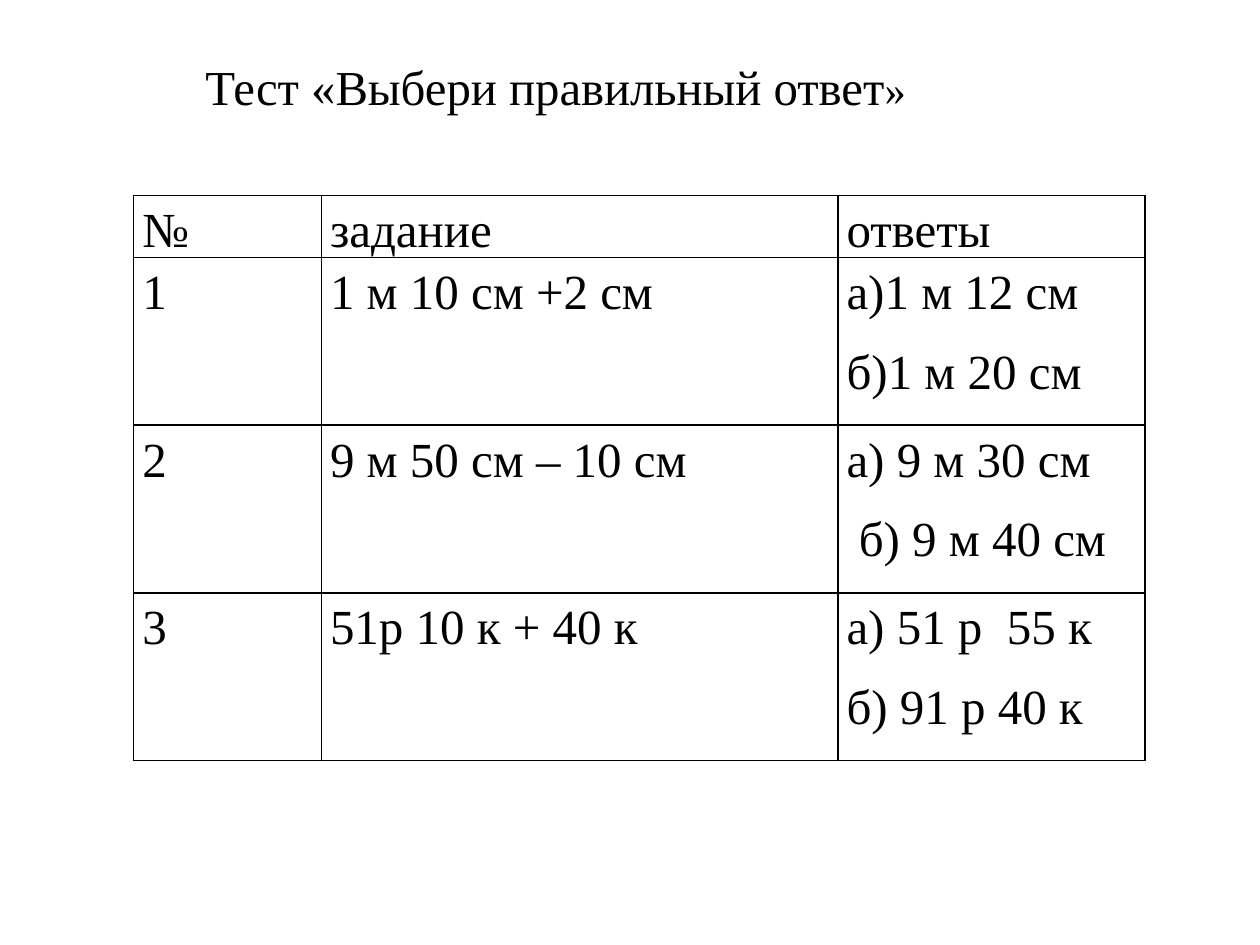
from pptx import Presentation
from pptx.dml.color import RGBColor
from pptx.enum.text import MSO_ANCHOR as Anchor, PP_ALIGN as Align
from pptx.oxml.ns import qn
from pptx.util import Inches, Pt
from lxml.etree import SubElement

FONT = "Times New Roman"
COLORS = {"ink": "000000", "paper": "FFFFFF"}
COLUMN_WIDTHS = [1.49, 4.1, 2.44]
HEADER_HEIGHT, TASK_HEIGHT = 0.49, 1.33

# Each cell is a list of its paragraphs
ROWS = [
    [["№"], ["задание"], ["ответы"]],
    [["1"], ["1 м 10 см +2 см"], ["а)1 м 12 см", "б)1 м 20 см"]],
    [["2"], ["9 м 50 см – 10 см"], ["а) 9 м 30 см", " б) 9 м 40 см"]],
    [["3"], ["51р 10 к + 40 к"], ["а) 51 р  55 к", "б) 91 р 40 к"]],
]


def add_text(paragraph, text, size=28, align=Align.LEFT, spacing=1.15, after=10):
    """Add a run to the paragraph and format both."""
    paragraph.alignment = align
    paragraph.line_spacing = spacing
    paragraph.space_before = Pt(0)
    paragraph.space_after = Pt(after)
    run = paragraph.add_run()
    run.text = text
    run.font.name = FONT
    run.font.size = Pt(size)
    run.font.bold = False
    run.font.color.rgb = RGBColor.from_string(COLORS["ink"])


def add_borders(cell, width=1):
    properties = cell._tc.get_or_add_tcPr()
    for side in ("lnL", "lnR", "lnT", "lnB"):
        line = SubElement(properties, qn(f"a:{side}"), w=str(Pt(width)))
        fill = SubElement(line, qn("a:solidFill"))
        SubElement(fill, qn("a:srgbClr"), val=COLORS["ink"])


def fill_title(title):
    title.left, title.top = Inches(0.51), Inches(-0.27)
    title.width, title.height = Inches(7.8), Inches(1.42)
    frame = title.text_frame
    frame.word_wrap = True
    frame.vertical_anchor = Anchor.MIDDLE
    frame.margin_top, frame.margin_bottom = Inches(0.53), Inches(0.05)
    paragraph = frame.paragraphs[0]
    for text, size in (("Тест «Выбери правильный ответ", 27.9), ("»", 24.3)):
        add_text(paragraph, text, size=size, align=Align.CENTER, spacing=1.0, after=0)


def fill_cell(cell, lines):
    cell.margin_left = cell.margin_right = Inches(0.07)
    cell.margin_top = cell.margin_bottom = 0
    cell.vertical_anchor = Anchor.TOP
    add_borders(cell)
    cell.fill.solid()
    cell.fill.fore_color.rgb = RGBColor.from_string(COLORS["paper"])
    frame = cell.text_frame
    for index, line in enumerate(lines):
        paragraph = frame.add_paragraph() if index else frame.paragraphs[0]
        add_text(paragraph, line)


def add_test_table(slide):
    heights = [HEADER_HEIGHT] + [TASK_HEIGHT] * (len(ROWS) - 1)
    table = slide.shapes.add_table(
        len(ROWS), len(COLUMN_WIDTHS), Inches(1.06), Inches(1.55),
        Inches(sum(COLUMN_WIDTHS)), Inches(sum(heights))).table
    table.first_row = table.horz_banding = False
    for column, width in zip(table.columns, COLUMN_WIDTHS):
        column.width = Inches(width)
    for row, height, contents in zip(table.rows, heights, ROWS):
        row.height = Inches(height)
        for cell, lines in zip(row.cells, contents):
            fill_cell(cell, lines)


def main():
    presentation = Presentation()
    presentation.slide_width, presentation.slide_height = Inches(10), Inches(7.5)
    # Title Only layout
    slide = presentation.slides.add_slide(presentation.slide_layouts[5])
    fill_title(slide.shapes.title)
    add_test_table(slide)
    presentation.save("out.pptx")


if __name__ == "__main__":
    main()
